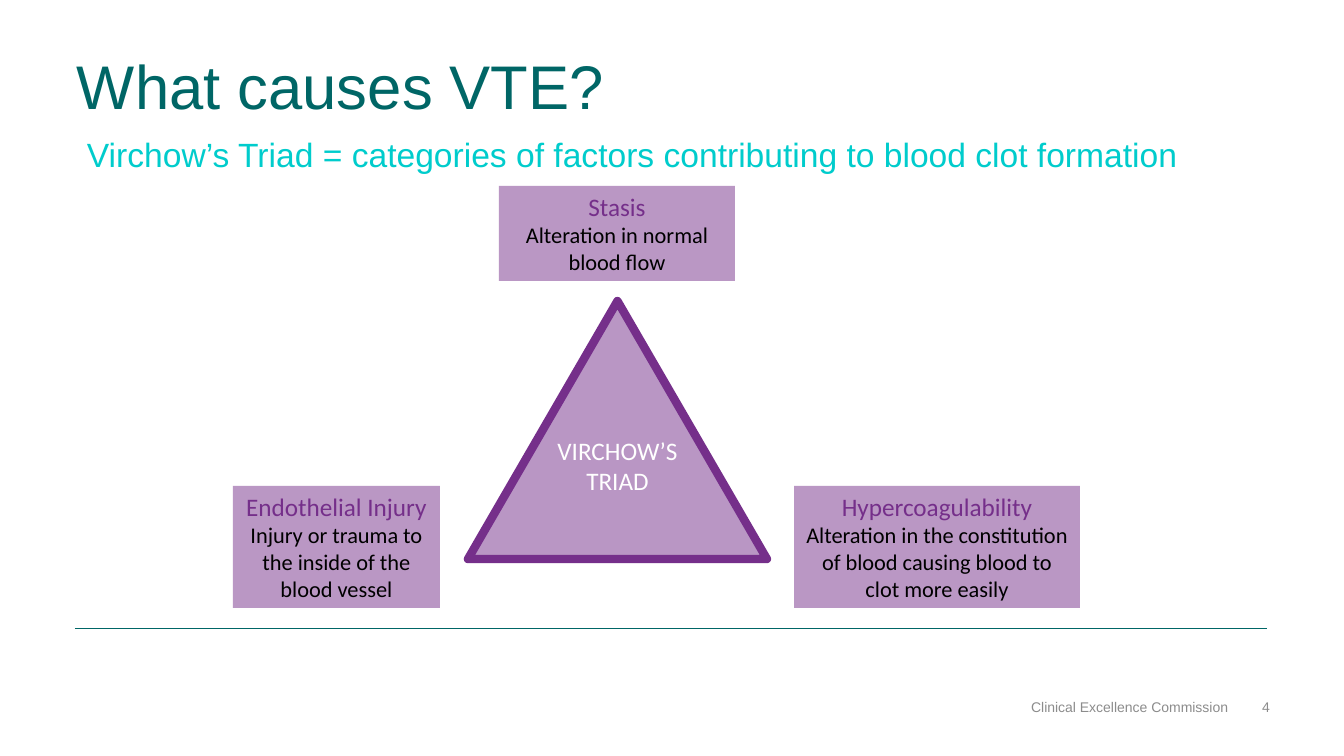
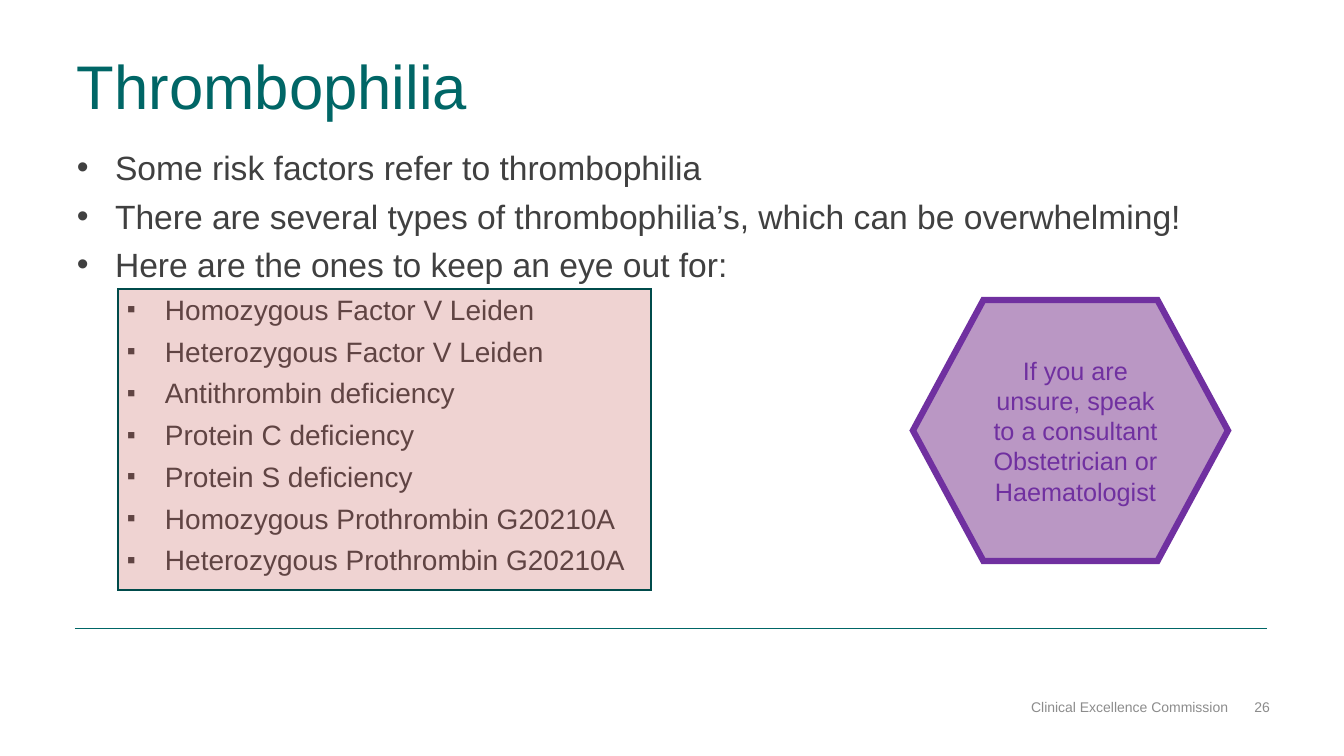
from lxml import etree
from pptx import Presentation
from pptx import util as u
from pptx.dml.color import RGBColor
from pptx.enum import shapes, text
from pptx.oxml.ns import qn

MSO = shapes.MSO_SHAPE
ALIGN = text.PP_ALIGN
ANCHOR = text.MSO_ANCHOR
LEFT, WIDTH = 77, 1190


def px(n):
    return u.Emu(round(n * 12192000 / 1344))


def color(value):
    return RGBColor.from_string(value)


def sub(parent, tag, **attrs):
    return etree.SubElement(parent, qn(tag), attrs)


class Deck:
    TEAL, AQUA, GREY, BODY = "006666", "00CCCC", "8C8C8C", "404040"
    PURPLE, VIOLET, LILAC = "752F8A", "7030A0", "BA97C4"
    WHITE, BLACK, RED, DARK_TEAL = "FFFFFF", "000000", "C0504D", "004B4B"
    FOOTER = "Clinical Excellence Commission"
    BULLETS = [("•", 38, 24, 100), ("▪", 88, 20, 90)]

    def __init__(self):
        self.prs = Presentation()
        self.prs.slide_width, self.prs.slide_height = px(1344), px(756)
        self.s = None

    def slide(self, title, number, layout):
        self.s = self.prs.slides.add_slide(self.prs.slide_layouts[layout])
        sp = self.s.shapes.title
        self.place(sp, LEFT, 56, WIDTH, 74)
        tf = self.frame(sp, ANCHOR.TOP, 0, 0)
        p = self.para(tf, title, 44, self.TEAL)
        p.line_spacing = 0.9
        for x, w, label in [(774, 454, self.FOOTER), (1228, 42, str(number))]:
            self.label(x, 675, w, 40, label, 10, self.GREY,
                       ALIGN.RIGHT, ANCHOR.BOTTOM, 0, 0)
        self.rule(75, 1267, 628)

    def place(self, sp, x, y, w, h):
        sp.left, sp.top, sp.width, sp.height = map(px, (x, y, w, h))

    def frame(self, sp, anchor, side=10, top=5):
        tf = sp.text_frame
        tf.word_wrap = True
        tf.auto_size = text.MSO_AUTO_SIZE.NONE
        tf.vertical_anchor = anchor
        tf.margin_left = tf.margin_right = px(side)
        tf.margin_top = tf.margin_bottom = px(top)
        return tf

    def para(self, tf, words, size, ink, align=ALIGN.LEFT, font="Arial"):
        p = tf.paragraphs[0]
        if p.runs:
            p = tf.add_paragraph()
        p.alignment = align
        p.space_before = u.Pt(0)
        r = p.add_run()
        r.text = words
        r.font.size, r.font.name = u.Pt(size), font
        r.font.color.rgb = color(ink)
        return p

    def label(self, x, y, w, h, words, size, ink, align=ALIGN.LEFT,
              anchor=ANCHOR.TOP, side=10, top=5):
        sp = self.s.shapes.add_textbox(*map(px, (x, y, w, h)))
        self.para(self.frame(sp, anchor, side, top), words, size, ink, align)

    def rule(self, x1, x2, y):
        line = self.s.shapes.add_connector(
            shapes.MSO_CONNECTOR.STRAIGHT, *map(px, (x1, y, x2, y)))
        line.line.color.rgb = color(self.TEAL)
        line.line.width = u.Pt(0.5)
        sub(line._element.spPr, "a:effectLst")

    def shape(self, kind, x, y, w, h, fill, line=None, width=0,
              alpha=100, join="a:miter"):
        sp = self.s.shapes.add_shape(kind, *map(px, (x, y, w, h)))
        sp.shadow.inherit = False
        sp.fill.solid()
        sp.fill.fore_color.rgb = color(fill)
        if alpha < 100:
            clr = sp._element.spPr.find(qn("a:solidFill"))[0]
            sub(clr, "a:alpha", val=str(alpha * 1000))
        if line:
            sp.line.color.rgb = color(line)
            sp.line.width = u.Pt(width)
            sub(sp.line._get_or_add_ln(), join)
        else:
            sp.line.fill.background()
        return sp

    def factor(self, x, y, w, h, name, detail):
        sp = self.shape(MSO.RECTANGLE, x, y, w, h, self.LILAC)
        tf = self.frame(sp, ANCHOR.TOP)
        self.para(tf, name, 18, self.PURPLE, ALIGN.CENTER, "Calibri")
        self.para(tf, detail, 16, self.BLACK, ALIGN.CENTER, "Calibri")

    def bullets(self, x, y, w, h, items):
        sp = self.s.placeholders[1]
        self.place(sp, x, y, w, h)
        tf = self.frame(sp, ANCHOR.TOP, 0, 0)
        for i, (level, words) in enumerate(items):
            char, indent, size, scale = self.BULLETS[level]
            p = self.para(tf, words, size, self.BODY)
            p.level = level
            pPr = p._p.get_or_add_pPr()
            pPr.set("marL", str(px(indent)))
            pPr.set("indent", str(-px(38)))
            sub(pPr, "a:buSzPct", val=str(scale * 1000))
            sub(pPr, "a:buFont", typeface="Arial")
            sub(pPr, "a:buChar", char=char)
            p.space_before = u.Pt(5.8 if i else 0)


def triad(d):
    d.slide("What causes VTE?", 4, 5)
    d.label(LEFT, 129, WIDTH, 50,
            "Virchow’s Triad = categories of factors contributing to blood clot formation",
            24, d.AQUA)
    sp = d.shape(MSO.ISOSCELES_TRIANGLE, 468, 301, 299, 258, d.PURPLE,
                 d.PURPLE, 6, 50, "a:round")
    d.para(d.frame(sp, ANCHOR.TOP), "VIRCHOW’S TRIAD", 18, d.WHITE,
           ALIGN.CENTER, "Calibri")
    for x, y, w, h, name, detail in [
        (499, 186, 236, 95, "Stasis", "Alteration in normal blood flow"),
        (794, 486, 286, 122, "Hypercoagulability",
         "Alteration in the constitution of blood causing blood to clot more easily"),
        (233, 486, 207, 122, "Endothelial Injury",
         "Injury or trauma to the inside of the blood vessel"),
    ]:
        d.factor(x, y, w, h, name, detail)


def thrombophilia(d):
    d.slide("Thrombophilia", 26, 1)
    points = ["Some risk factors refer to thrombophilia",
              "There are several types of thrombophilia’s, which can be overwhelming!",
              "Here are the ones to keep an eye out for:"]
    types = ["Homozygous Factor V Leiden", "Heterozygous Factor V Leiden",
             "Antithrombin deficiency", "Protein C deficiency",
             "Protein S deficiency", "Homozygous Prothrombin G20210A",
             "Heterozygous Prothrombin G20210A"]
    d.bullets(LEFT, 147, WIDTH, 458,
              [(0, t) for t in points] + [(1, t) for t in types])
    d.shape(MSO.RECTANGLE, 118, 289, 533, 301, d.RED, d.DARK_TEAL, 1, 25)
    sp = d.shape(MSO.HEXAGON, 913, 300, 315, 261, d.LILAC, d.VIOLET, 4.5)
    sp.adjustments[0] = 0.27
    p = d.para(d.frame(sp, ANCHOR.MIDDLE),
               "If you are unsure, speak to a consultant Obstetrician or Haematologist",
               18, d.VIOLET, ALIGN.CENTER)
    p._p.get_or_add_pPr().set("marL", str(px(10)))


def main():
    d = Deck()
    triad(d)
    thrombophilia(d)
    d.prs.save("out.pptx")


if __name__ == "__main__":
    main()
